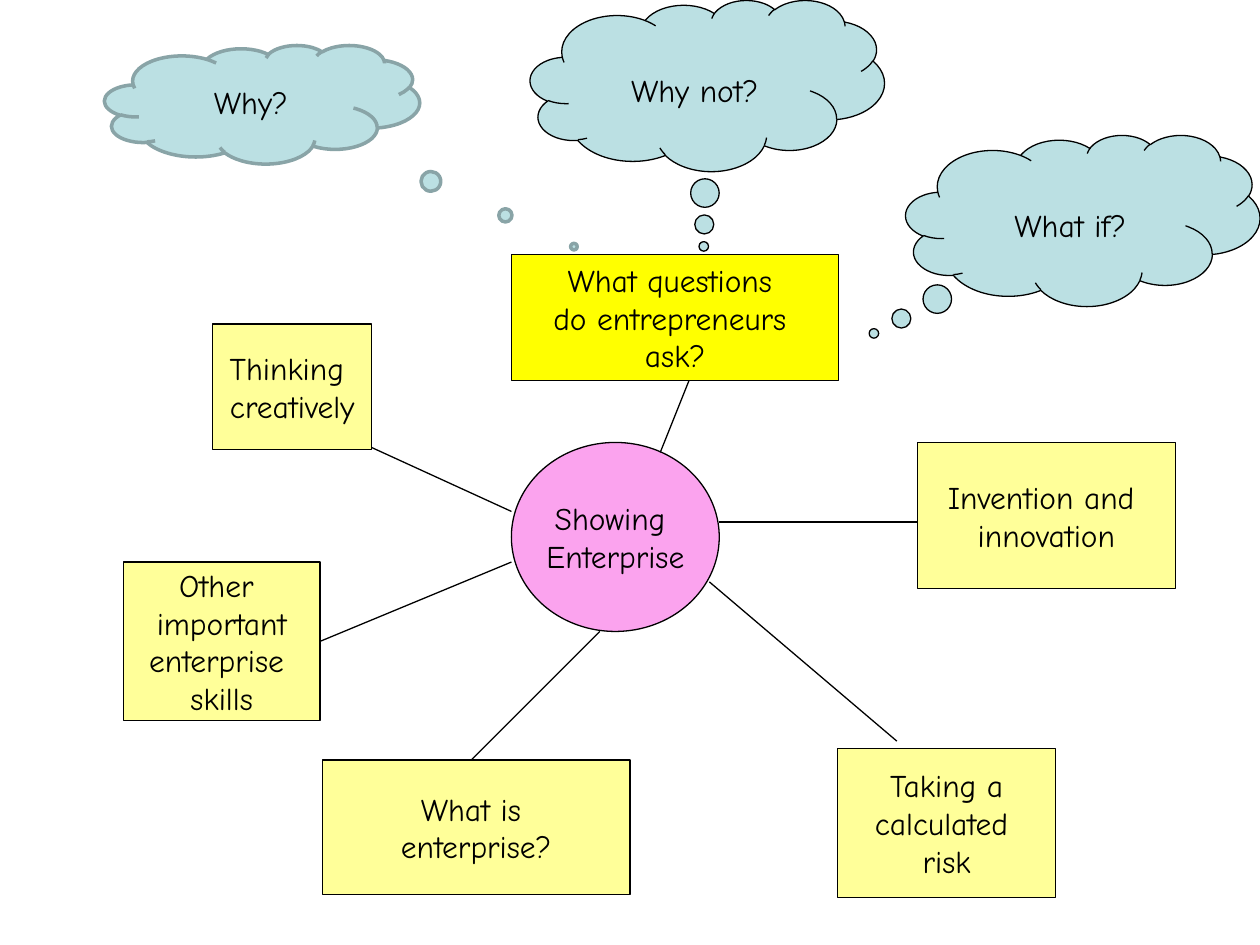
from dataclasses import dataclass

from lxml import etree
from pptx import Presentation
from pptx.dml.color import RGBColor
from pptx.enum.shapes import MSO_CONNECTOR, MSO_SHAPE
from pptx.enum.text import MSO_ANCHOR, PP_ALIGN
from pptx.oxml.ns import qn
from pptx.util import Cm, Pt

RECTANGLE = MSO_SHAPE.RECTANGLE
OVAL = MSO_SHAPE.OVAL
CLOUD = MSO_SHAPE.CLOUD_CALLOUT
STRAIGHT = MSO_CONNECTOR.STRAIGHT
MIDDLE = MSO_ANCHOR.MIDDLE
CENTER = PP_ALIGN.CENTER
RIGHT_SIDE = 3


@dataclass(frozen=True)
class Theme:
    font: str = "Comic Neue"
    size: float = 18
    ink: str = "000000"
    hub: str = "FBA3EE"
    topic: str = "FFFF99"
    current_topic: str = "FFFF00"
    thought: str = "BBE0E3"
    soft_outline: str = "89A4A7"
    thin: float = 0.75
    thick: float = 2


THEME = Theme()

TOPICS = [
    ("Thinking \ncreatively", (4.29, 6.53, 3.2, 2.54), THEME.topic),
    ("What is \nenterprise?", (6.5, 15.32, 6.2, 2.72), THEME.topic),
    ("Taking a\ncalculated \nrisk", (16.89, 15.09, 4.39, 3), THEME.topic),
    ("Invention and \ninnovation", (18.49, 8.92, 5.21, 2.95), THEME.topic),
    ("What questions \ndo entrepreneurs \nask?", (10.31, 5.13, 6.6, 2.54),
     THEME.current_topic),
]

SPOKES = [
    ((10.31, 10.31), (7.49, 9.02)),
    ((14.5, 10.52), (18.49, 10.52)),
    ((13.31, 9.12), (13.89, 7.67)),
    ((14.3, 11.73), (18.08, 14.94)),
    ((12.09, 12.73), (9.5, 15.32)),
]


def add_label(slide, kind, text, box, fill, outline=THEME.ink,
              weight=THEME.thin, wrap=False):
    label = slide.shapes.add_shape(kind, *map(Cm, box))
    label.shadow.inherit = False
    label.fill.solid()
    label.fill.fore_color.rgb = RGBColor.from_string(fill)
    label.line.color.rgb = RGBColor.from_string(outline)
    label.line.width = Pt(weight)
    frame = label.text_frame
    frame.text = text
    frame.word_wrap = wrap
    frame.vertical_anchor = MIDDLE
    for paragraph in frame.paragraphs:
        paragraph.alignment = CENTER
        for run in paragraph.runs:
            run.font.name = THEME.font
            run.font.size = Pt(THEME.size)
            run.font.color.rgb = RGBColor.from_string(THEME.ink)
    return label


def add_thought(slide, text, box, tail, outline=THEME.ink,
                weight=THEME.thin, top_margin=0.13):
    thought = add_label(slide, CLOUD, text, box, THEME.thought,
                        outline, weight, wrap=True)
    thought.adjustments[0], thought.adjustments[1] = tail
    thought.text_frame.margin_top = Cm(top_margin)


def add_spoke(slide, start, end):
    spoke = slide.shapes.add_connector(STRAIGHT, *map(Cm, start + end))
    spoke.line.color.rgb = RGBColor.from_string(THEME.ink)
    spoke.line.width = Pt(THEME.thin)
    etree.SubElement(spoke._element.spPr, qn("a:effectLst"))
    return spoke


def main():
    deck = Presentation()
    deck.slide_width, deck.slide_height = Cm(25.4), Cm(19.05)
    slide = deck.slides.add_slide(deck.slide_layouts[6])

    add_label(slide, OVAL, "Showing \nEnterprise",
              (10.31, 8.92, 4.19, 3.81), THEME.hub)
    for text, box, fill in TOPICS:
        add_label(slide, RECTANGLE, text, box, fill)
    other_skills = add_label(
        slide, RECTANGLE, "Other \nimportant\nenterprise \nskills",
        (2.49, 11.33, 3.96, 3.2), THEME.topic)

    for start, end in SPOKES:
        add_spoke(slide, start, end)
    skills_spoke = add_spoke(slide, (10.31, 11.33), (6.45, 12.93))
    skills_spoke.end_connect(other_skills, RIGHT_SIDE)

    add_thought(slide, "Why not?", (10.69, 0, 7.14, 3.45), (-0.01, 0.94),
                top_margin=0.48)
    add_thought(slide, "Why?", (2.11, 0.91, 6.35, 2.39), (0.99, 1.2),
                THEME.soft_outline, THEME.thick)
    add_thought(slide, "What if?", (18.26, 2.72, 7.14, 3.45), (-0.59, 0.66),
                top_margin=0.48)

    deck.save("out.pptx")


if __name__ == "__main__":
    main()
